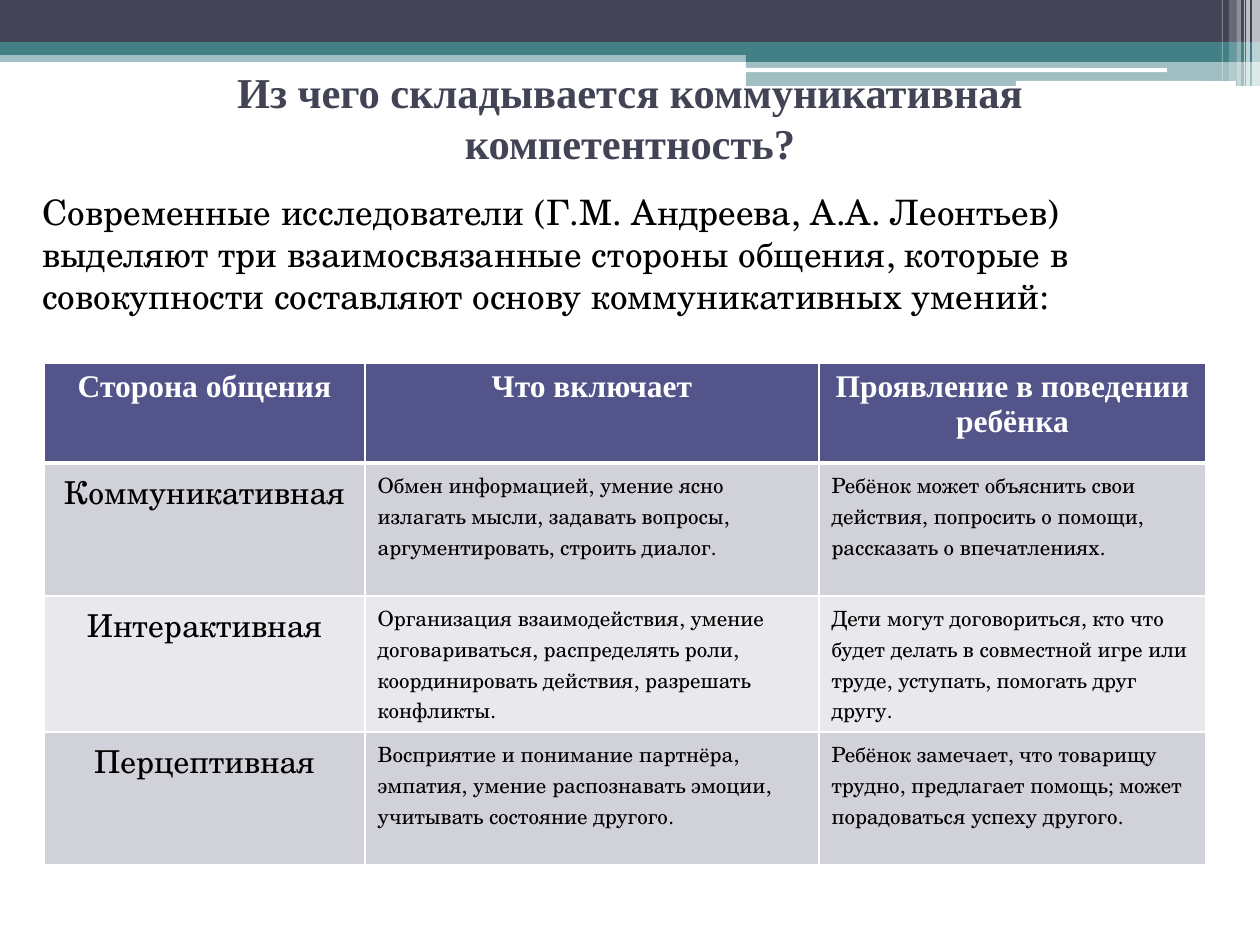
from dataclasses import dataclass

from lxml.etree import SubElement
from pptx import Presentation
from pptx.dml.color import RGBColor
from pptx.enum.shapes import MSO_SHAPE
from pptx.enum.text import MSO_ANCHOR, PP_ALIGN
from pptx.oxml.ns import qn
from pptx.util import Emu, Pt

PIXELS_PER_INCH = 126


def px(length):
    return Emu(round(length * 914400 / PIXELS_PER_INCH))


@dataclass(frozen=True)
class Theme:
    dark: str = "424456"
    teal: str = "438086"
    white: str = "FFFFFF"
    black: str = "000000"
    header: str = "53548A"
    odd_row: str = "D1D1DA"
    even_row: str = "E9E9ED"
    serif: str = "Times New Roman"
    school: str = "TeX Gyre Schola"
    title_size: float = 24.3
    body_size: int = 20
    heading_size: int = 18
    detail_size: int = 12
    title_leading: int = 29


class SlideBuilder:
    def __init__(self, slide, theme):
        self.slide = slide
        self.theme = theme

    def bar(self, left, top, width, height, color, opacity=100, kind=MSO_SHAPE.RECTANGLE):
        shape = self.slide.shapes.add_shape(kind, px(left), px(top), px(width), px(height))
        shape.shadow.inherit = False
        shape.line.fill.background()
        shape.fill.solid()
        shape.fill.fore_color.rgb = RGBColor.from_string(color)
        if opacity < 100:
            color_element = shape._element.spPr.find(qn("a:solidFill"))[0]
            SubElement(color_element, qn("a:alpha"), val=str(opacity * 1000))

    def style(self, paragraph, font, size, color, bold=False, align=PP_ALIGN.LEFT):
        paragraph.alignment = align
        for run in paragraph.runs:
            run.font.name = font
            run.font.size = Pt(size)
            run.font.bold = bold
            run.font.color.rgb = RGBColor.from_string(color)

    def text_box(self, left, top, width, height, text):
        shape = self.slide.shapes.add_textbox(px(left), px(top), px(width), px(height))
        frame = shape.text_frame
        frame.word_wrap = True
        frame.text = text
        return frame

    def title(self, left, top, width, height, text, bottom_inset):
        frame = self.text_box(left, top, width, height, text)
        frame.vertical_anchor = MSO_ANCHOR.MIDDLE
        frame.margin_top = 0
        frame.margin_bottom = px(bottom_inset)
        paragraph = frame.paragraphs[0]
        paragraph.line_spacing = Pt(self.theme.title_leading)
        self.style(paragraph, self.theme.serif, self.theme.title_size,
                   self.theme.dark, True, PP_ALIGN.CENTER)

    def body(self, left, top, width, height, text, indent):
        frame = self.text_box(left, top, width, height, text)
        paragraph = frame.paragraphs[0]
        paragraph._p.get_or_add_pPr().set("marL", str(px(indent)))
        self.style(paragraph, self.theme.school, self.theme.body_size, self.theme.black)

    def border(self, cell, side, points):
        properties = cell._tc.get_or_add_tcPr()
        line = SubElement(properties, qn(f"a:ln{side}"), w=str(Pt(points)))
        fill = SubElement(line, qn("a:solidFill"))
        SubElement(fill, qn("a:srgbClr"), val=self.theme.white)

    def cell(self, cell, text, row, column):
        theme = self.theme
        is_header = row == 0
        for side in "LRTB":
            thick = (is_header and side == "B") or (row == 1 and side == "T")
            self.border(cell, side, 3 if thick else 1)
        color = theme.header if is_header else theme.odd_row if row % 2 else theme.even_row
        cell.fill.solid()
        cell.fill.fore_color.rgb = RGBColor.from_string(color)
        cell.text_frame.text = text
        paragraph = cell.text_frame.paragraphs[0]
        if is_header:
            self.style(paragraph, theme.serif, theme.heading_size, theme.white, True, PP_ALIGN.CENTER)
        elif column == 0:
            self.style(paragraph, theme.school, theme.heading_size, theme.black, align=PP_ALIGN.CENTER)
        else:
            self.style(paragraph, theme.school, theme.detail_size, theme.black)

    def table(self, left, top, widths, heights, rows):
        frame = self.slide.shapes.add_table(len(heights), len(widths), px(left), px(top),
                                            px(sum(widths)), px(sum(heights)))
        table = frame.table
        table.horz_banding = False
        for column, width in zip(table.columns, widths):
            column.width = px(width)
        for row, height in zip(table.rows, heights):
            row.height = px(height)
        for row, texts in enumerate(rows):
            for column, text in enumerate(texts):
                self.cell(table.cell(row, column), text, row, column)


ROWS = [
    ("Сторона общения", "Что включает", "Проявление в поведении ребёнка"),
    ("Коммуникативная",
     "Обмен информацией, умение ясно излагать мысли, задавать вопросы, аргументировать, строить диалог.",
     "Ребёнок может объяснить свои действия, попросить о помощи, рассказать о впечатлениях."),
    ("Интерактивная",
     "Организация взаимодействия, умение договариваться, распределять роли, "
     "координировать действия, разрешать конфликты.",
     "Дети могут договориться, кто что будет делать в совместной игре или труде, "
     "уступать, помогать друг другу."),
    ("Перцептивная",
     "Восприятие и понимание партнёра, эмпатия, умение распознавать эмоции, учитывать состояние другого.",
     "Ребёнок замечает, что товарищу трудно, предлагает помощь; может порадоваться успеху другого."),
]

STRIPES = [
    (1252, 8, 86, 65), (1246, 4, 86, 65), (1244, 1, 86, 60),
    (1237, 4, 86, 40), (1229, 8, 81, 20), (1222, 1, 81, 30),
]


def main():
    theme = Theme()
    presentation = Presentation()
    presentation.slide_width = px(1260)
    presentation.slide_height = px(945)
    slide = presentation.slides.add_slide(presentation.slide_layouts[6])
    builder = SlideBuilder(slide, theme)

    builder.bar(0, 50, 1260, 12, theme.teal, 50)
    builder.bar(0, 0, 1260, 43, theme.dark)
    builder.bar(0, 42, 1260, 13, theme.teal)
    builder.bar(746, 49, 514, 13, theme.teal)
    builder.bar(746, 61, 514, 25, theme.teal, 50)
    builder.bar(745, 68, 422, 4, theme.white, kind=MSO_SHAPE.ROUNDED_RECTANGLE)
    builder.bar(1016, 81, 220, 5, theme.white, kind=MSO_SHAPE.ROUNDED_RECTANGLE)
    for left, width, height, opacity in STRIPES:
        builder.bar(left, 0, width, height, theme.white, opacity)

    builder.title(63, 86, 1134, 139, "Из чего складывается коммуникативная компетентность?", 77)
    builder.body(15, 184, 1221, 745,
                 "Современные исследователи (Г.М. Андреева, А.А. Леонтьев) выделяют три "
                 "взаимосвязанные стороны общения, которые в совокупности составляют "
                 "основу коммуникативных умений:", 15)
    builder.table(44, 363, [321, 454, 387], [100, 133, 136, 133], ROWS)
    presentation.save("out.pptx")


if __name__ == "__main__":
    main()
